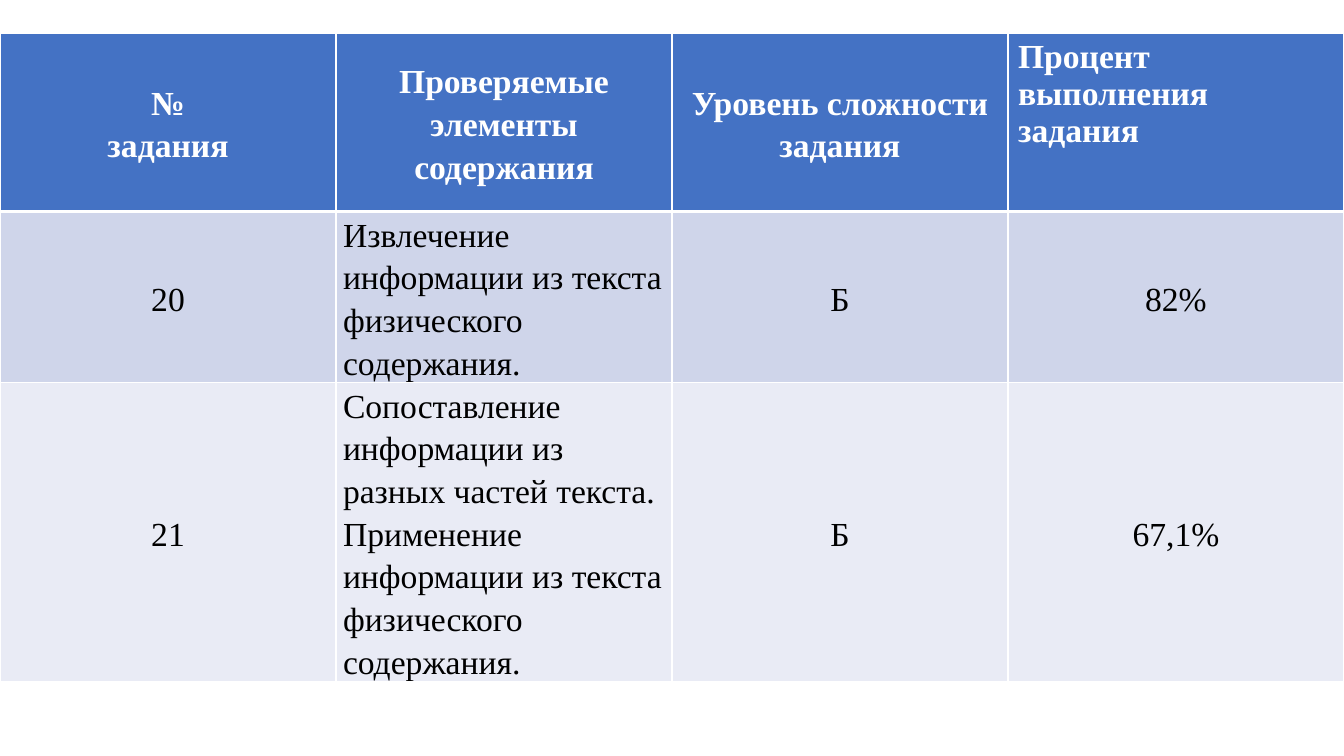
"""Build a slide with a table of task results: content, difficulty and completion rate."""
import pptx
import pptx.dml.color
import pptx.enum.text
import pptx.oxml
import pptx.oxml.ns
import pptx.util

COLORS = {"header": "4472C4", "band_dark": "CFD5EA", "band_light": "E9EBF5",
          "white": "FFFFFF", "black": "000000"}
ROWS = [
    ["№\nзадания", "Проверяемые элементы\nсодержания",
     "Уровень сложности\nзадания", "Процент выполнения задания"],
    ["20", "Извлечение информации из текста физического содержания.", "Б", "82%"],
    ["21", "Сопоставление информации из разных частей текста. "
           "Применение информации из текста физического содержания.", "Б", "67,1%"],
]
ROW_HEIGHTS = [1.77, 1.03, 1.56]
ROW_FILLS = ["header", "band_dark", "band_light"]
ALIGN = pptx.enum.text.PP_ALIGN


def rgb(name):
    return pptx.dml.color.RGBColor.from_string(COLORS[name])


def add_border(cell, side, points):
    cell._tc.get_or_add_tcPr().append(pptx.oxml.parse_xml(
        f'<a:ln{side} {pptx.oxml.ns.nsdecls("a")} w="{pptx.util.Pt(points)}">'
        f'<a:solidFill><a:srgbClr val="{COLORS["white"]}"/></a:solidFill></a:ln{side}>'))


prs = pptx.Presentation()
prs.slide_width = pptx.util.Inches(13.33)
prs.slide_height = pptx.util.Inches(7.5)
s = prs.slides.add_slide(prs.slide_layouts[6])

table_height = pptx.util.Inches(6.77)
frame = s.shapes.add_table(len(ROWS), len(ROWS[0]), 0, pptx.util.Inches(0.33),
                           prs.slide_width, table_height)
table = frame.table
for row, height in zip(table.rows, ROW_HEIGHTS):
    row.height = pptx.util.Inches(height)
frame.height = table_height

for i, texts in enumerate(ROWS):
    for j, text in enumerate(texts):
        cell = table.cell(i, j)
        is_header = i == 0
        is_plain = is_header and j == 3
        cell.text = text
        if not is_plain:
            cell.vertical_anchor = pptx.enum.text.MSO_ANCHOR.MIDDLE
            cell.margin_left = cell.margin_right = pptx.util.Inches(0.07)
            cell.margin_top = cell.margin_bottom = 0
        for side, points in (("L", 1), ("R", 1), ("T", 3 if i == 1 else 1),
                             ("B", 3 if is_header else 1)):
            add_border(cell, side, points)
        cell.fill.solid()
        cell.fill.fore_color.rgb = rgb(ROW_FILLS[i])
        is_left = is_plain or (j == 1 and not is_header)
        for p in cell.text_frame.paragraphs:
            p.alignment = ALIGN.LEFT if is_left else ALIGN.CENTER
            p.line_spacing = 1.0 if is_plain else 1.15
            p.font.name = "Times New Roman"
            p.font.size = pptx.util.Pt(24)
            p.font.bold = is_header
            p.font.color.rgb = rgb("white" if is_header else "black")

prs.save("out.pptx")
